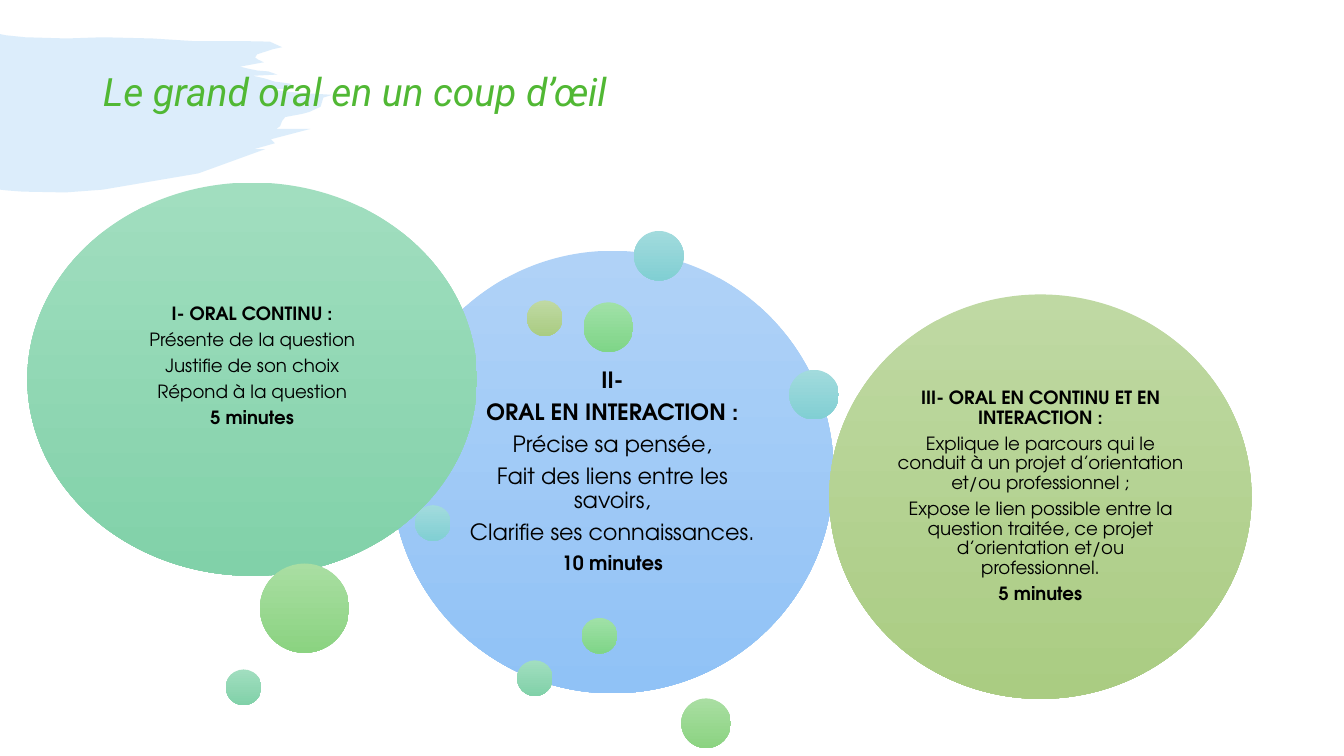
import pptx
import pptx.util
import pptx.dml.color
import pptx.enum.shapes
import pptx.enum.text
import pptx.oxml.ns
import lxml.etree

Cm, Pt = pptx.util.Cm, pptx.util.Pt
RGB = pptx.dml.color.RGBColor.from_string
PP_ALIGN = pptx.enum.text.PP_ALIGN
MIDDLE = pptx.enum.text.MSO_ANCHOR.MIDDLE
qn = pptx.oxml.ns.qn

COLORS = {"brush": "54A8EC", "title": "51B834", "text": "000000"}
GRADIENTS = {
    "blue": ("B0D2F7", "90C2F6"),
    "teal": ("A2DBDD", "81CFD3"),
    "mint": ("A1DEBF", "81D1A9"),
    "green": ("A0E1A7", "7FD588"),
    "leaf": ("A9DEA2", "8BD381"),
    "olive": ("BFD9A3", "AACC82"),
}
SMALL, MEDIUM, LARGE = 0.9, 1.25, 2.25


def add_bubble(x, y, w, h, color):
    sp = s.shapes.add_shape(pptx.enum.shapes.MSO_SHAPE.OVAL, Cm(x), Cm(y), Cm(w), Cm(h))
    sp.shadow.inherit = False
    sp.line.fill.background()
    sp.fill.gradient()
    sp.fill.gradient_angle = 270
    for stop, rgb in zip(sp.fill.gradient_stops, GRADIENTS[color]):
        stop.color.rgb = RGB(rgb)
    return sp


def write_step(sp, lines, size, last_size, inset, bottom):
    tf = sp.text_frame
    tf.word_wrap = True
    tf.vertical_anchor = MIDDLE
    tf.margin_left = tf.margin_right = tf.margin_top = Cm(inset)
    tf.margin_bottom = Cm(bottom)
    tf.text = "\n".join(text for text, bold in lines)
    for p, (text, bold) in zip(tf.paragraphs, lines):
        pt = last_size if text == lines[-1][0] else size
        p.alignment = PP_ALIGN.CENTER
        p.line_spacing = 0.9
        p.space_after = Pt(round(0.35 * pt, 1))
        f = p.runs[0].font
        f.name, f.size, f.bold = "TeX Gyre Adventor", Pt(pt), bold
        f.color.rgb = RGB(COLORS["text"])


prs = pptx.Presentation()
prs.slide_width, prs.slide_height = Cm(33.87), Cm(19.05)
s = prs.slides.add_slide(prs.slide_layouts[5])

brush_points = [
    (15, 89), (64, 94), (168, 97), (259, 94), (384, 97), (493, 104), (630, 104),
    (680, 105), (711, 119), (688, 124), (648, 137), (643, 145), (650, 150),
    (665, 157), (605, 168), (625, 173), (650, 178), (676, 180), (699, 188),
    (638, 191), (668, 198), (693, 206), (711, 208), (732, 211), (737, 216),
    (729, 224), (668, 224), (752, 234), (838, 239), (815, 246), (808, 269),
    (780, 282), (762, 287), (719, 295), (711, 305), (706, 318), (696, 325),
    (782, 325), (683, 351), (693, 361), (640, 376), (668, 376), (500, 437),
    (259, 478), (165, 485), (58, 483), (18, 480), (0, 478),
]
fb = s.shapes.build_freeform(0, 86, scale=Cm(0.01))
fb.add_line_segments(brush_points, close=True)
brush = fb.convert_to_shape()
brush.shadow.inherit = False
brush.line.fill.background()
brush.fill.solid()
brush.fill.fore_color.rgb = RGB(COLORS["brush"])
clr = brush._element.spPr.find(".//" + qn("a:srgbClr"))
lxml.etree.SubElement(clr, qn("a:alpha"), val="20000")
s.shapes._spTree.insert(2, brush._element)

title = s.shapes.title
title.left, title.top, title.width, title.height = Cm(2.34), Cm(1.02), Cm(29.21), Cm(3.78)
tf = title.text_frame
tf.text = "Le grand oral en un coup d’œil"
tf.auto_size = pptx.enum.text.MSO_AUTO_SIZE.NONE
tf.vertical_anchor = MIDDLE
tf.margin_bottom = Cm(1.2)
p = tf.paragraphs[0]
p.alignment = PP_ALIGN.LEFT
p.line_spacing = 0.9
f = p.runs[0].font
f.name, f.size, f.italic = "Roboto", Pt(27.9), True
f.color.rgb = RGB(COLORS["title"])

interaction = add_bubble(9.86, 6.32, 11.15, 11.15, "blue")
write_step(interaction, [
    ("II-", True),
    ("ORAL EN INTERACTION :", True),
    ("Précise sa pensée,", False),
    ("Fait des liens entre les savoirs,", False),
    ("Clarifie ses connaissances.", False),
    ("10 minutes", True),
], 16, 14, 0.18, 0.18)

for x, y, d, color in [
    (15.98, 5.82, MEDIUM, "teal"),
    (13.03, 16.64, SMALL, "mint"),
    (17.17, 17.6, MEDIUM, "leaf"),
    (13.28, 7.57, SMALL, "olive"),
    (10.46, 12.73, SMALL, "teal"),
]:
    add_bubble(x, y, d, d, color)

continu = add_bubble(0.69, 4.6, 11.33, 9.91, "mint")
write_step(continu, [
    ("I- ORAL CONTINU :", True),
    ("Présente de la question", False),
    ("Justifie de son choix", False),
    ("Répond à la question", False),
    ("5 minutes", True),
], 13, 13, 0.13, 0.78)

projet = add_bubble(20.9, 7.42, 10.64, 10.19, "olive")
write_step(projet, [
    ("III- ORAL EN CONTINU ET EN INTERACTION :", True),
    ("Explique le parcours qui le conduit à un projet d’orientation et/ou professionnel ;", False),
    ("Expose le lien possible entre la question traitée, ce projet d’orientation et/ou professionnel.", False),
    ("5 minutes", True),
], 13, 13, 0.13, 0.13)

for x, y, d, color in [
    (14.71, 7.62, MEDIUM, "green"),
    (6.55, 14.2, LARGE, "leaf"),
    (19.89, 9.32, MEDIUM, "teal"),
    (5.69, 16.87, SMALL, "mint"),
    (14.66, 15.57, SMALL, "green"),
]:
    add_bubble(x, y, d, d, color)

prs.save("out.pptx")
